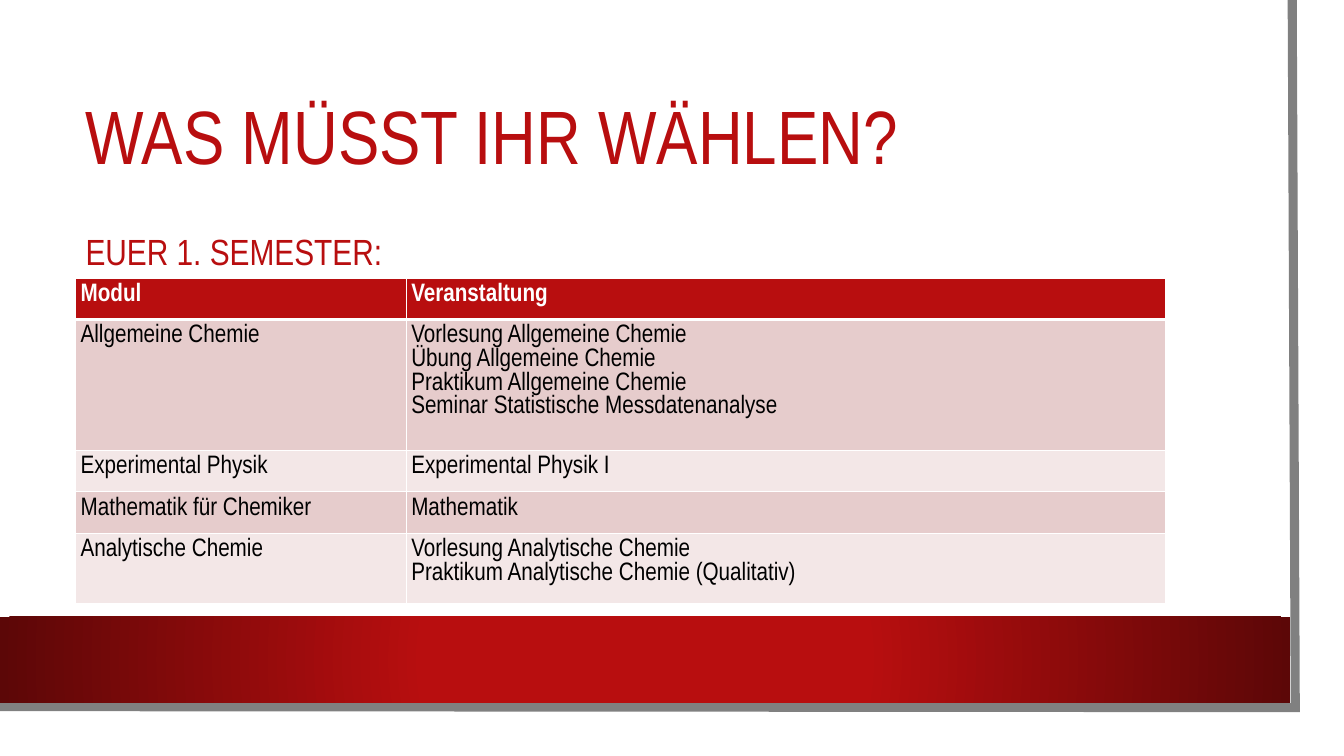
from typing import NamedTuple

from lxml.etree import SubElement
from pptx import Presentation
from pptx.dml.color import RGBColor
from pptx.enum.shapes import MSO_SHAPE as Preset
from pptx.enum.text import MSO_ANCHOR as Anchor, PP_ALIGN as Align
from pptx.oxml import parse_xml
from pptx.oxml.ns import nsdecls, qn
from pptx.util import Emu, Inches, Pt

FONT = "Arial Narrow"
RED = RGBColor(0xB8, 0x0E, 0x0F)
DARK_RED = RGBColor(0x5C, 0x07, 0x07)
GRAY = RGBColor(0x80, 0x80, 0x80)
WHITE = RGBColor(0xFF, 0xFF, 0xFF)
BLACK = RGBColor(0x00, 0x00, 0x00)
BANDS = (RGBColor(0xE6, 0xCC, 0xCC), RGBColor(0xF3, 0xE7, 0xE7))

# The slide is a grid of 160 columns by 90 rows of square units.
COLUMNS, ROWS = 160, 90
UNIT = Inches(1) / 12
MARGIN = 9


class Area(NamedTuple):
    left: float
    top: float
    width: float
    height: float


class Module(NamedTuple):
    name: str
    courses: tuple[str, ...]
    height: float


SHEET = Area(0, 0, 157.2, 87.24)
BAND = Area(0, 73.44, 153.6, 10.2)
EDGE = ((153.84, 0), (154.2, 84.24), (-0.36, 84.12))
TITLE = Area(MARGIN, 9, 136.44, 15.24)
SUBTITLE = Area(MARGIN, 24.24, 63.72, 8.88)
TABLE_TOP = 33.12
TABLE_COLUMNS = (39.36, 90.36)
LOW_ROW = 4.92

MODULES = (
    Module("Modul", ("Veranstaltung",), LOW_ROW),
    Module("Allgemeine Chemie", (
        "Vorlesung Allgemeine Chemie",
        "Übung Allgemeine Chemie",
        "Praktikum Allgemeine Chemie",
        "Seminar Statistische Messdatenanalyse",
    ), 12.36),
    Module("Experimental Physik", ("Experimental Physik I",), LOW_ROW),
    Module("Mathematik für Chemiker", ("Mathematik",), LOW_ROW),
    Module("Analytische Chemie", (
        "Vorlesung Analytische Chemie",
        "Praktikum Analytische Chemie (Qualitativ)",
    ), 6.84),
)


def units(count: float) -> Emu:
    return Emu(round(count * UNIT))


def place(area: Area) -> tuple[Emu, ...]:
    return tuple(units(length) for length in area)


def format_text(frame, size: float, color: RGBColor, bold: bool = False) -> None:
    for para in frame.paragraphs:
        para.alignment = Align.LEFT
        for span in para.runs:
            span.font.name = FONT
            span.font.size = Pt(size)
            span.font.bold = bold
            span.font.color.rgb = color


def write_heading(box, text: str, size: float, anchor: Anchor) -> None:
    frame = box.text_frame
    frame.text = text
    frame.word_wrap = True
    frame.vertical_anchor = anchor
    frame.paragraphs[0].line_spacing = 0.9
    format_text(frame, size, RED)


def add_rectangle(page, area: Area):
    box = page.shapes.add_shape(Preset.RECTANGLE, *place(area))
    box.shadow.inherit = False
    box.fill.solid()
    box.fill.fore_color.rgb = WHITE
    box.line.fill.background()
    return box


def fill_radially(box, inner: RGBColor, outer: RGBColor) -> None:
    gradient = parse_xml(
        f'<a:gradFill {nsdecls("a")} rotWithShape="1"><a:gsLst>'
        f'<a:gs pos="34000"><a:srgbClr val="{inner}"/></a:gs>'
        f'<a:gs pos="100000"><a:srgbClr val="{outer}"/></a:gs></a:gsLst>'
        '<a:path path="circle">'
        '<a:fillToRect l="50000" t="50000" r="50000" b="50000"/>'
        '</a:path></a:gradFill>'
    )
    properties = box.element.spPr
    properties.replace(properties.find(qn("a:solidFill")), gradient)


def add_edge(page) -> None:
    start, *others = [(units(x), units(y)) for x, y in EDGE]
    builder = page.shapes.build_freeform(*start)
    builder.add_line_segments(others, close=False)
    edge = builder.convert_to_shape()
    edge.shadow.inherit = False
    edge.fill.background()
    edge.line.color.rgb = GRAY
    edge.line.width = Pt(6.5)
    SubElement(edge.element.spPr.find(qn("a:ln")), qn("a:miter"), lim="800000")


def add_borders(cell, top: float, bottom: float) -> None:
    """Draw white cell borders; top and bottom are widths in points."""
    properties = cell._tc.get_or_add_tcPr()
    for side, width in (("L", 1), ("R", 1), ("T", top), ("B", bottom)):
        line = SubElement(properties, qn(f"a:ln{side}"), w=str(Pt(width)))
        fill = SubElement(line, qn("a:solidFill"))
        SubElement(fill, qn("a:srgbClr"), val=str(WHITE))


def add_modules(page) -> None:
    area = Area(MARGIN, TABLE_TOP, sum(TABLE_COLUMNS),
                sum(module.height for module in MODULES))
    table = page.shapes.add_table(
        len(MODULES), len(TABLE_COLUMNS), *place(area)).table
    for column, width in zip(table.columns, TABLE_COLUMNS):
        column.width = units(width)
    for index, (row, module) in enumerate(zip(table.rows, MODULES)):
        header = index == 0
        row.height = units(module.height)
        for cell, text in zip(row.cells, (module.name, "\n".join(module.courses))):
            cell.margin_left = cell.margin_right = Inches(0.05)
            cell.margin_top = cell.margin_bottom = Inches(0.05)
            add_borders(cell, top=3 if index == 1 else 1, bottom=3 if header else 1)
            cell.fill.solid()
            cell.fill.fore_color.rgb = RED if header else BANDS[(index - 1) % 2]
            cell.text_frame.text = text
            format_text(cell.text_frame, 18, WHITE if header else BLACK, header)


def main() -> None:
    deck = Presentation()
    deck.slide_width, deck.slide_height = units(COLUMNS), units(ROWS)
    page = deck.slides.add_slide(deck.slide_layouts[5])

    add_rectangle(page, SHEET)
    add_edge(page)
    fill_radially(add_rectangle(page, BAND), RED, DARK_RED)

    title = page.shapes.title
    title.element.getparent().append(title.element)  # in front of the sheet
    title.left, title.top, title.width, title.height = place(TITLE)
    write_heading(title, "WAS MÜSST IHR WÄHLEN?", 54, Anchor.MIDDLE)
    subtitle = page.shapes.add_textbox(*place(SUBTITLE))
    write_heading(subtitle, "EUER 1. SEMESTER:", 26, Anchor.BOTTOM)

    add_modules(page)
    deck.save("out.pptx")


if __name__ == "__main__":
    main()
